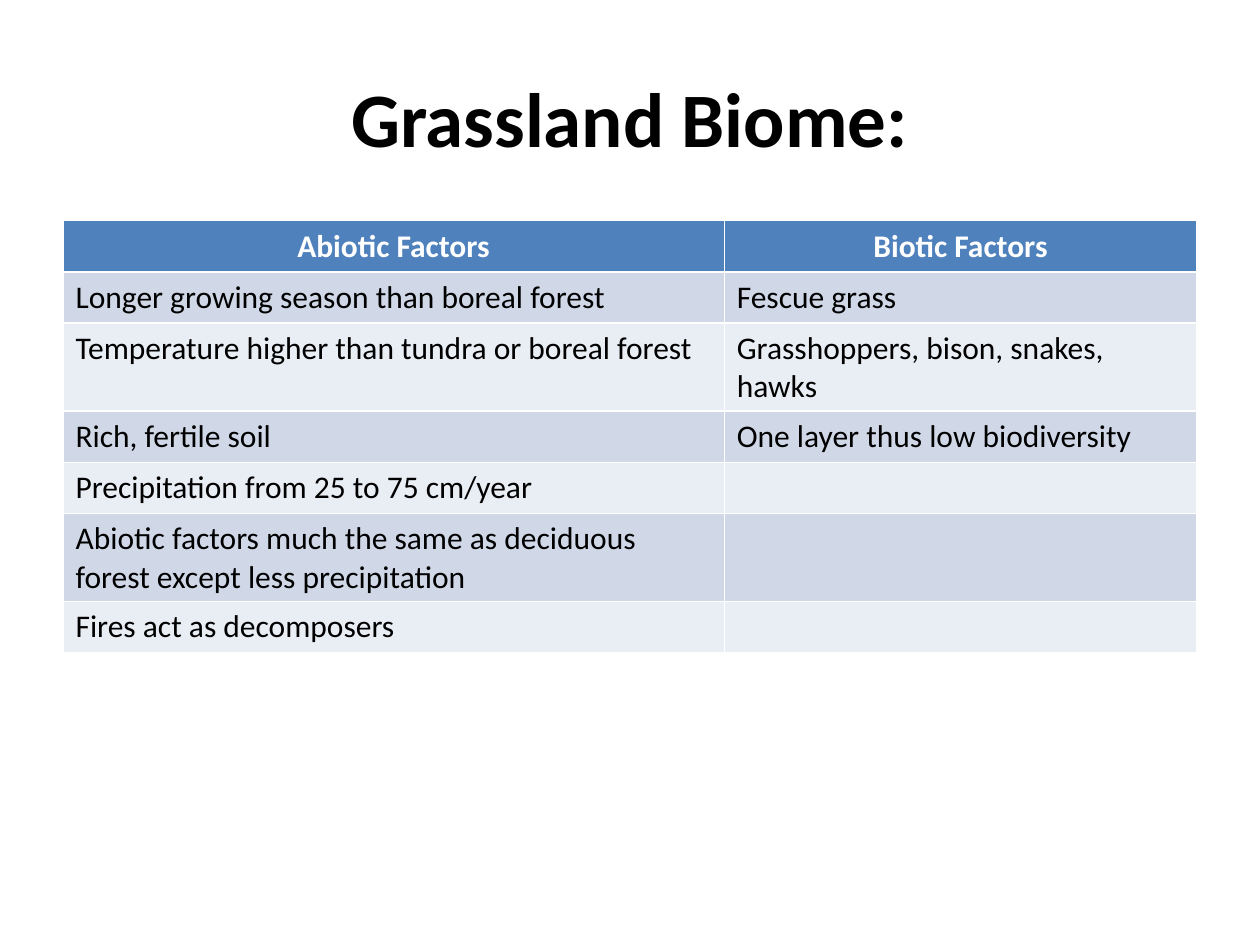
"""Build a slide that tabulates the abiotic and biotic factors of the grassland biome."""
from dataclasses import dataclass

import pptx
import pptx.dml.color
import pptx.enum.text
import pptx.util
from pptx.util import Cm

FONT = "Calibri"
COLOURS = {
    "text": "000000",
    "header_text": "FFFFFF",
    "header": "4F81BD",
    "odd_row": "D0D8E8",
    "even_row": "E9EDF4",
}
MARGIN = Cm(1.27)
CONTENT_WIDTH = Cm(22.86)
COLUMN_WIDTHS = (Cm(13.33), Cm(9.53))
ROW_HEIGHT = Cm(1.03)


@dataclass(frozen=True)
class FactorRow:
    """One table row of paired factors."""

    abiotic: str
    biotic: str = ""


FACTOR_ROWS = (
    FactorRow("Abiotic Factors", "Biotic Factors"),
    FactorRow("Longer growing season than boreal forest", "Fescue grass"),
    FactorRow("Temperature higher than tundra or boreal forest",
              "Grasshoppers, bison, snakes, hawks"),
    FactorRow("Rich, fertile soil", "One layer thus low biodiversity"),
    FactorRow("Precipitation from 25 to 75 cm/year"),
    FactorRow("Abiotic factors much the same as deciduous forest except less precipitation"),
    FactorRow("Fires act as decomposers"),
)


def colour(name: str) -> pptx.dml.color.RGBColor:
    """Look up a named colour."""
    return pptx.dml.color.RGBColor.from_string(COLOURS[name])


def write(frame, text: str, size: int, ink: str, bold: bool, centred: bool) -> None:
    """Write one styled paragraph into a text frame."""
    paragraph = frame.paragraphs[0]
    paragraph.text = text
    paragraph.font.name = FONT
    paragraph.font.size = pptx.util.Pt(size)
    paragraph.font.bold = bold
    paragraph.font.color.rgb = colour(ink)
    align = pptx.enum.text.PP_ALIGN
    paragraph.alignment = align.CENTER if centred else align.LEFT


def add_title(slide, text: str) -> None:
    """Add the centred slide title."""
    frame = slide.shapes.add_textbox(MARGIN, Cm(0.76), CONTENT_WIDTH, Cm(3.18)).text_frame
    frame.word_wrap = True
    frame.vertical_anchor = pptx.enum.text.MSO_ANCHOR.MIDDLE
    write(frame, text, 44, "text", bold=True, centred=True)


def add_factor_table(slide, factor_rows: tuple[FactorRow, ...]) -> None:
    """Add the table with a header row and alternating row fills."""
    table = slide.shapes.add_table(
        len(factor_rows), len(COLUMN_WIDTHS), MARGIN, Cm(4.45),
        CONTENT_WIDTH, ROW_HEIGHT * len(factor_rows)).table
    for column, width in zip(table.columns, COLUMN_WIDTHS):
        column.width = width
    for index, factors in enumerate(factor_rows):
        header = index == 0
        fill = "header" if header else "odd_row" if index % 2 else "even_row"
        ink = "header_text" if header else "text"
        table.rows[index].height = ROW_HEIGHT
        for cell, text in zip(table.rows[index].cells, (factors.abiotic, factors.biotic)):
            cell.fill.solid()
            cell.fill.fore_color.rgb = colour(fill)
            if text:
                write(cell.text_frame, text, 18, ink, bold=header, centred=header)


def main() -> None:
    """Create and save the presentation."""
    presentation = pptx.Presentation()
    presentation.slide_width = Cm(25.4)
    presentation.slide_height = Cm(19.05)
    slide = presentation.slides.add_slide(presentation.slide_layouts[6])
    add_title(slide, "Grassland Biome:")
    add_factor_table(slide, FACTOR_ROWS)
    presentation.save("out.pptx")


if __name__ == "__main__":
    main()
